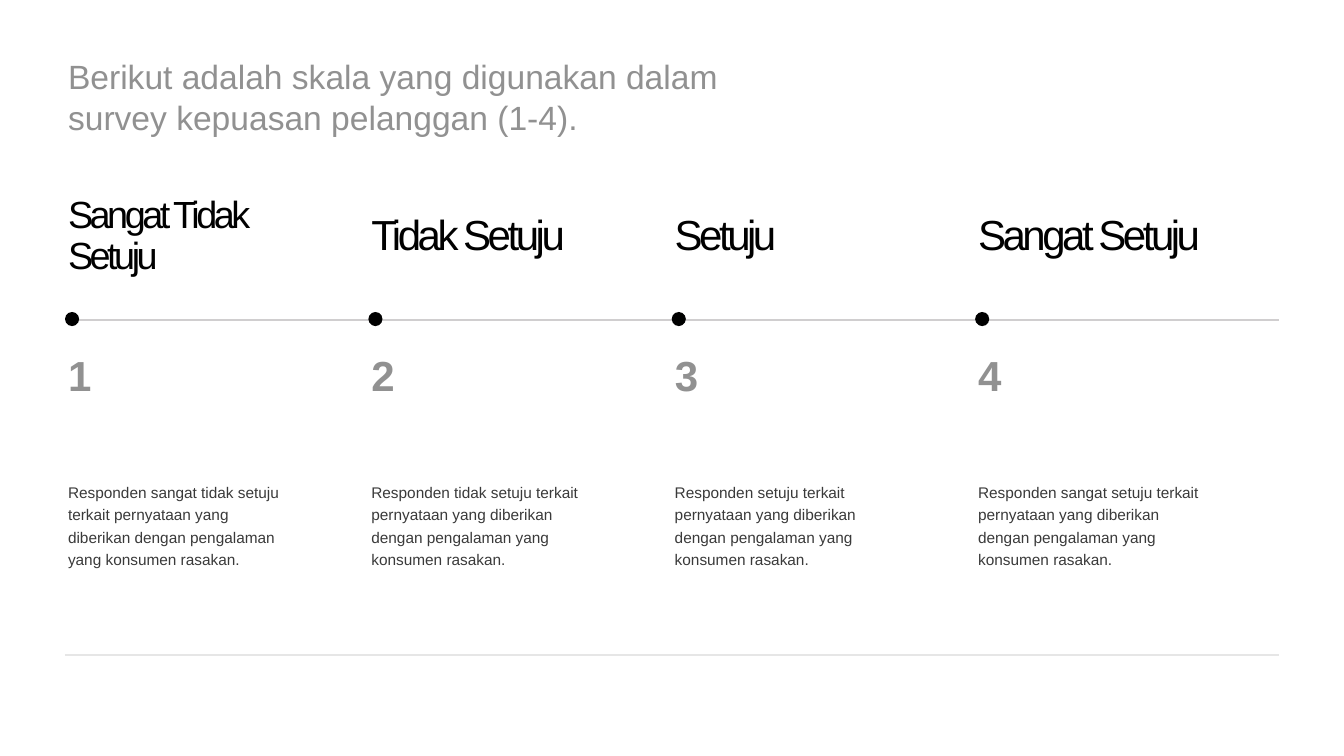
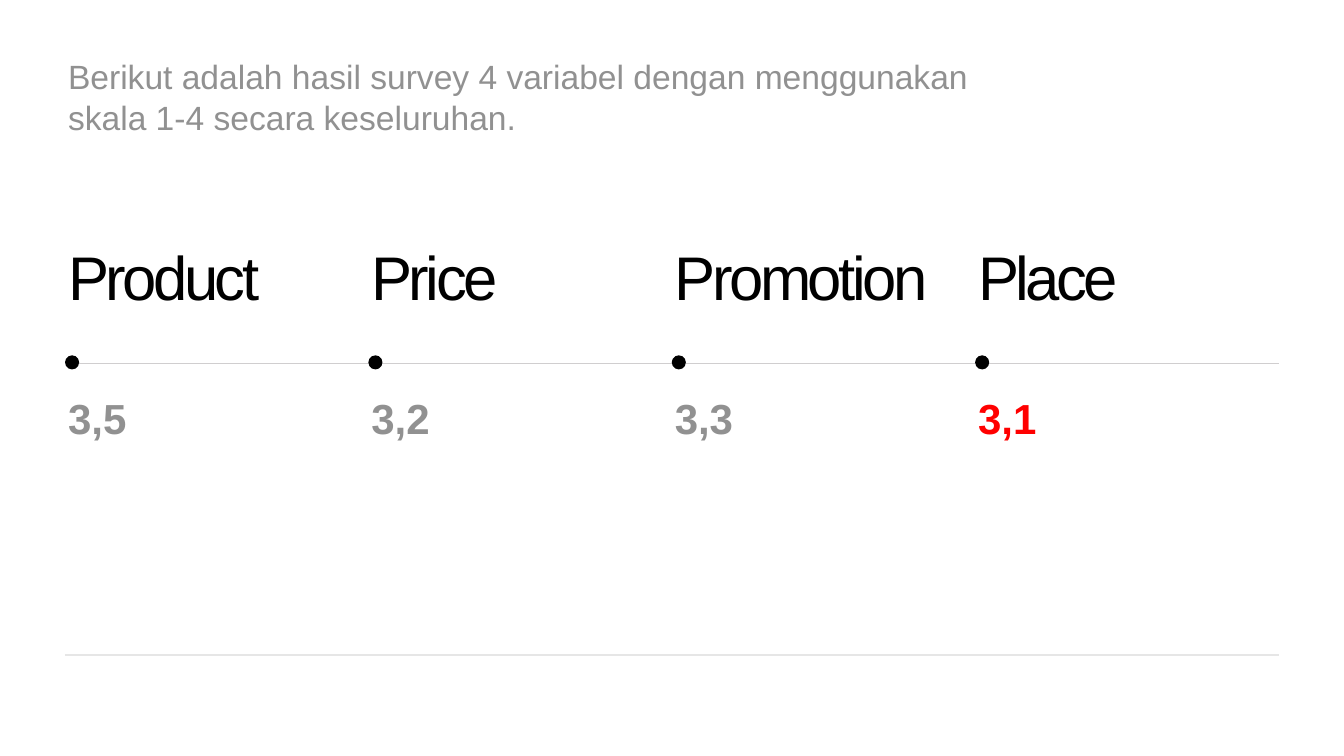
from lxml import etree
from pptx import Presentation
from pptx.dml.color import RGBColor
from pptx.enum.shapes import MSO_CONNECTOR as Connector, MSO_SHAPE as Preset
from pptx.enum.text import MSO_ANCHOR as Anchor, MSO_AUTO_SIZE as AutoSize, PP_ALIGN as Align
from pptx.oxml.ns import qn
from pptx.util import Emu, Pt

EMU_PER_PX = 9144
SLIDE_WIDTH, SLIDE_HEIGHT = 2667, 1500
LEFT, RIGHT = 129, 2538
COLUMN_STEP = 602
DOT_SIZE = 28
TEXT_INSET = 6
TITLE_ONLY_LAYOUT = 5

FONT = "Arial"
BLACK = RGBColor(0x00, 0x00, 0x00)
GREY = RGBColor(0x91, 0x91, 0x91)
DARK_GREY = RGBColor(0x3A, 0x3A, 0x3A)
AXIS_GREY = RGBColor(0xD0, 0xCE, 0xCF)
RULE_GREY = RGBColor(0xE6, 0xE6, 0xE6)
RED = RGBColor(0xFF, 0x00, 0x00)


def px(length):
    return Emu(length * EMU_PER_PX)


def column_left(index):
    return LEFT + index * COLUMN_STEP


def fill_text(shape, text, size, color, line_spacing=1.0, space_before=0, bold=False, tracking=0):
    frame = shape.text_frame
    frame.word_wrap = True
    frame.auto_size = AutoSize.SHAPE_TO_FIT_TEXT
    frame.vertical_anchor = Anchor.MIDDLE
    frame.margin_left = frame.margin_right = px(TEXT_INSET)
    frame.margin_top = frame.margin_bottom = px(TEXT_INSET)
    paragraph = frame.paragraphs[0]
    paragraph.alignment = Align.LEFT
    paragraph.line_spacing = line_spacing
    paragraph.space_before = Pt(space_before)
    run = paragraph.add_run()
    run.text = text
    run.font.name = FONT
    run.font.size = Pt(size)
    run.font.bold = bold
    run.font.color.rgb = color
    if tracking:
        run.font._element.set("spc", str(tracking * 100))


def add_text(slide, left, top, width, height, text, size, color, **style):
    shape = slide.shapes.add_textbox(px(left), px(top), px(width), px(height))
    fill_text(shape, text, size, color, **style)


def add_intro(slide, text, width):
    title = slide.shapes.title
    title.left, title.top = px(LEFT), px(105)
    title.width, title.height = px(width), px(173)
    fill_text(title, text, 48, GREY, space_before=15)


def add_line(slide, left, y, color):
    line = slide.shapes.add_connector(Connector.STRAIGHT, px(left), px(y), px(RIGHT), px(y))
    line.line.color.rgb = color
    line.line.width = Pt(2)
    etree.SubElement(line._element.spPr, qn("a:effectLst"))


def add_dot(slide, left, top):
    dot = slide.shapes.add_shape(Preset.OVAL, px(left), px(top), px(DOT_SIZE), px(DOT_SIZE))
    dot.shadow.inherit = False
    dot.fill.solid()
    dot.fill.fore_color.rgb = BLACK
    dot.line.fill.background()


def add_heading(slide, left, axis_y, text, size, height):
    top = axis_y - 165 - height // 2
    add_text(slide, left, top, 533, height, text, size, BLACK, line_spacing=0.9, tracking=-5)


def add_scale(slide, axis_y, columns):
    add_line(slide, LEFT + DOT_SIZE // 2, axis_y, AXIS_GREY)
    for index, (heading, size, height, score, score_color) in enumerate(columns):
        left = column_left(index)
        add_dot(slide, left, axis_y - 16)
        add_heading(slide, left, axis_y, heading, size, height)
        add_text(slide, left, axis_y + 37, 338, 121, score, 60, score_color,
                 line_spacing=1.2, bold=True)


def add_descriptions(slide, opinions):
    for index, opinion in enumerate(opinions):
        text = (f"Responden {opinion} terkait pernyataan yang diberikan "
                "dengan pengalaman yang konsumen rasakan.")
        add_text(slide, column_left(index), 945, 454, 189, text, 22, DARK_GREY, line_spacing=1.2)


def add_scale_slide(presentation, intro, intro_width, axis_y, columns):
    slide = presentation.slides.add_slide(presentation.slide_layouts[TITLE_ONLY_LAYOUT])
    add_line(slide, LEFT, 1300, RULE_GREY)
    add_intro(slide, intro, intro_width)
    add_scale(slide, axis_y, columns)
    return slide


def main():
    presentation = Presentation()
    presentation.slide_width, presentation.slide_height = px(SLIDE_WIDTH), px(SLIDE_HEIGHT)

    answers = [
        ("Sangat Tidak Setuju", 54, 175, "1", GREY),
        ("Tidak Setuju", 60, 102, "2", GREY),
        ("Setuju", 60, 102, "3", GREY),
        ("Sangat Setuju", 60, 102, "4", GREY),
    ]
    answer_slide = add_scale_slide(
        presentation, "Berikut adalah skala yang digunakan dalam survey kepuasan pelanggan (1-4).",
        1383, 635, answers)
    add_descriptions(answer_slide, [heading.lower() for heading, *_ in answers])

    results = [
        ("Product", "3,5", GREY),
        ("Price", "3,2", GREY),
        ("Promotion", "3,3", GREY),
        ("Place", "3,1", RED),
    ]
    add_scale_slide(
        presentation,
        "Berikut adalah hasil survey 4 variabel dengan menggunakan skala 1-4 secara keseluruhan.",
        1835, 721, [(name, 88, 145, score, color) for name, score, color in results])

    presentation.save("out.pptx")


if __name__ == "__main__":
    main()
